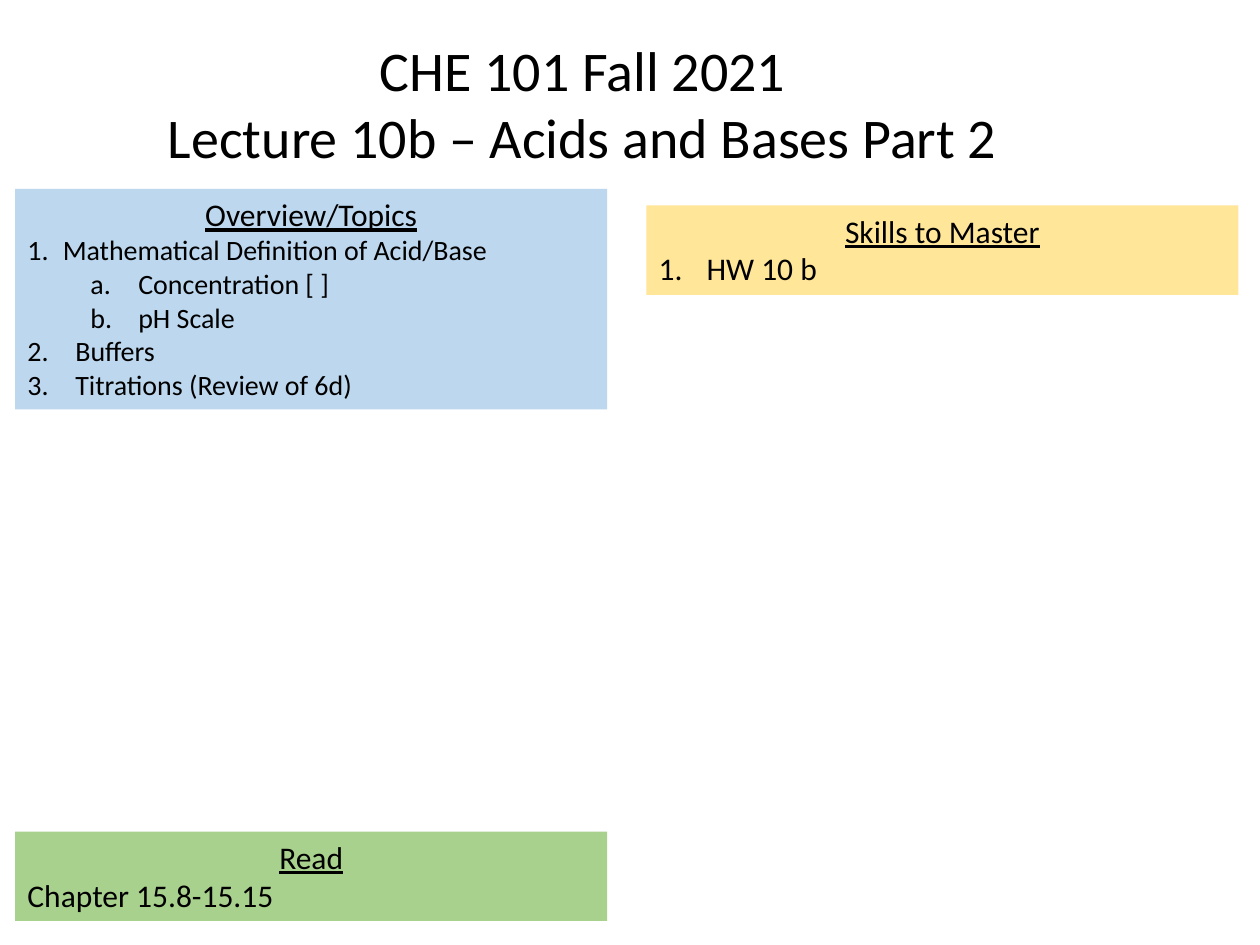
from pptx import Presentation
from pptx.dml.color import RGBColor
from pptx.enum.shapes import MSO_SHAPE as Shape
from pptx.enum.text import MSO_ANCHOR as Anchor, MSO_AUTO_SIZE as AutoSize, PP_ALIGN as Align
from pptx.oxml.xmlchemy import OxmlElement
from pptx.util import Inches, Pt

COLORS = {"text": "000000", "topics": "BDD7EE", "skills": "FFE699", "read": "A9D18E"}
FONT = "Calibri"
TITLE = ["CHE 101 Fall 2021", "Lecture 10b – Acids and Bases Part 2"]
TITLE_AREA = (12, 3.07, 68.5, 15.73)

PLAIN = None
FIRST = (0, "arabicPeriod", 0.28, 0.28)
NUMBER = (0, "arabicPeriod", 0.38, 0.38)
LETTER = (1, "alphaLcPeriod", 0.88, 0.38)

LEFT_COLUMN, RIGHT_COLUMN, COLUMN_WIDTH = 1.2, 51.3, 47
PANELS = [
    {"color": "topics", "column": LEFT_COLUMN, "top": 20, "height": 23.33,
     "heading": "Overview/Topics", "size": 16,
     "items": [("Mathematical Definition of Acid/Base", FIRST),
               ("Concentration [ ]", LETTER),
               ("pH Scale", LETTER),
               ("Buffers", NUMBER),
               ("Titrations (Review of 6d)", NUMBER)]},
    {"color": "skills", "column": RIGHT_COLUMN, "top": 21.73, "height": 9.47,
     "heading": "Skills to Master", "size": 18, "items": [("HW 10 b", NUMBER)]},
    {"color": "read", "column": LEFT_COLUMN, "top": 88, "height": 9.47,
     "heading": "Read", "size": 18, "items": [("Chapter 15.8-15.15", PLAIN)]},
]

deck = Presentation()
deck.slide_width, deck.slide_height = Inches(10), Inches(7.5)
page = deck.slides.add_slide(deck.slide_layouts[6])


def place(left, top, width, height):
    return (int(deck.slide_width * left / 100), int(deck.slide_height * top / 100),
            int(deck.slide_width * width / 100), int(deck.slide_height * height / 100))


def style(para, size, align=Align.LEFT, underline=False):
    para.alignment = align
    for span in para.runs:
        span.font.name = FONT
        span.font.size = Pt(size)
        span.font.underline = underline
        span.font.color.rgb = RGBColor.from_string(COLORS["text"])


def add_number(para, numbering):
    level, kind, indent, hanging = numbering
    para.level = level
    properties = para._p.get_or_add_pPr()
    properties.set("marL", str(Inches(indent)))
    properties.set("indent", str(-Inches(hanging)))
    bullet = OxmlElement("a:buAutoNum")
    bullet.set("type", kind)
    properties.append(bullet)


def add_panel(panel):
    area = place(panel["column"], panel["top"], COLUMN_WIDTH, panel["height"])
    box = page.shapes.add_shape(Shape.RECTANGLE, *area)
    box.shadow.inherit = False
    box.fill.solid()
    box.fill.fore_color.rgb = RGBColor.from_string(COLORS[panel["color"]])
    box.line.fill.background()
    frame = box.text_frame
    frame.word_wrap = True
    frame.auto_size = AutoSize.SHAPE_TO_FIT_TEXT
    frame.vertical_anchor = Anchor.TOP
    frame.text = "\n".join([panel["heading"]] + [text for text, _ in panel["items"]])
    heading, *paras = frame.paragraphs
    style(heading, 18, Align.CENTER, underline=True)
    for para, (_, numbering) in zip(paras, panel["items"]):
        style(para, panel["size"])
        if numbering:
            add_number(para, numbering)


for panel in PANELS:
    add_panel(panel)

title = page.shapes.add_textbox(*place(*TITLE_AREA)).text_frame
title.word_wrap = False
title.auto_size = AutoSize.SHAPE_TO_FIT_TEXT
title.text = "\n".join(TITLE)
for para in title.paragraphs:
    style(para, 32, Align.CENTER)

deck.save("out.pptx")
